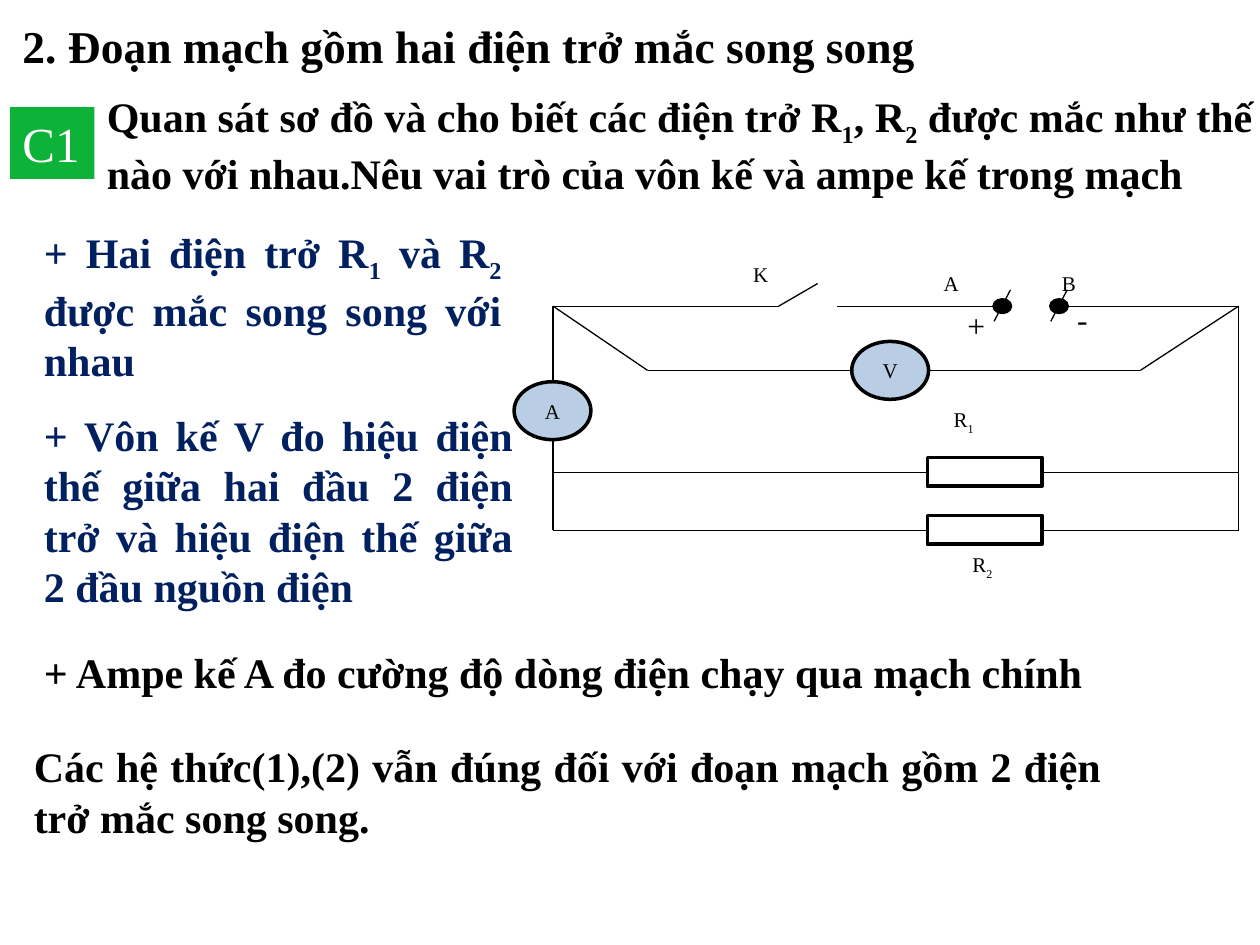
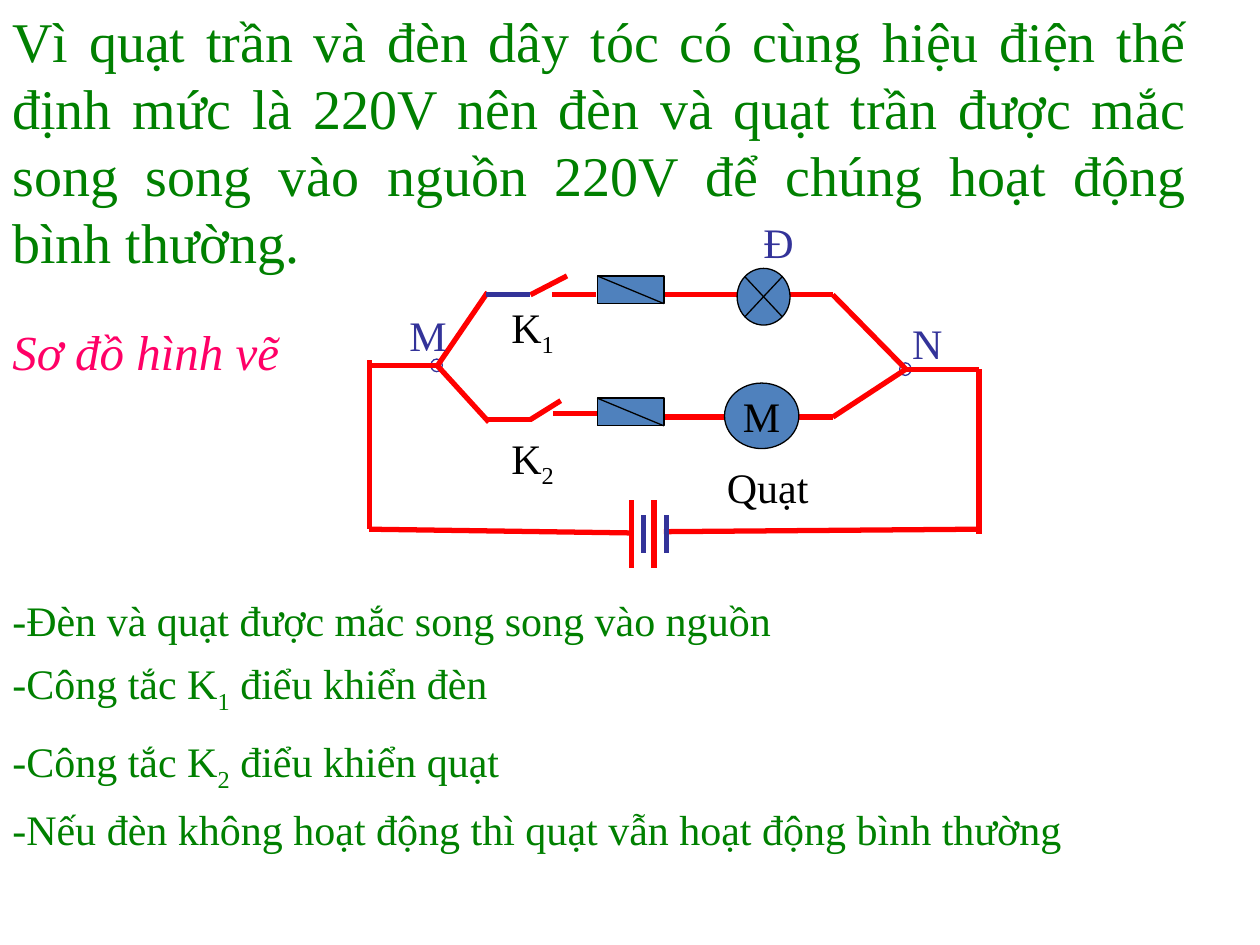
"""Builds two slides on parallel circuits, each with notes and a circuit diagram."""
from itertools import pairwise

from lxml.etree import SubElement
from pptx import Presentation
from pptx.dml.color import RGBColor
from pptx.enum.shapes import MSO_CONNECTOR as Connector, MSO_SHAPE as Preset
from pptx.enum.text import MSO_ANCHOR as Anchor, MSO_AUTO_SIZE as AutoSize, PP_ALIGN as Align
from pptx.oxml.ns import qn
from pptx.util import Inches, Pt

FONT = "Times New Roman"
BLACK, WHITE, NAVY, GREEN = "000000", "FFFFFF", "002060", "008000"
BADGE, METER, STEEL = "0DB338", "B9CDE5", "4F81BD"
RED, INDIGO, PINK = "FF0000", "333399", "FF0066"
BOLD = dict(size=24, bold=True)
JUSTIFIED = dict(BOLD, align=Align.JUSTIFY)
THIN, THICK = 0.75, 3

PARALLEL_NOTES = [
    ("2. Đoạn mạch gồm hai điện trở mắc song song", (0.08, 0.05, 9, 0.62),
     dict(JUSTIFIED, size=26, anchor=Anchor.MIDDLE)),
    ("Quan sát sơ đồ và cho biết các điện trở R_1, R_2 được mắc như thế nào với nhau."
     "Nêu vai trò của vôn kế và ampe kế trong mạch", (0.75, 0.67, 9.83, 0.91), BOLD),
    ("+ Hai điện trở R_1 và R_2 được mắc song song với nhau",
     (0.25, 1.75, 3.83, 1.3), dict(JUSTIFIED, color=NAVY)),
    ("+ Vôn kế V đo hiệu điện thế giữa hai đầu 2 điện trở và hiệu điện thế giữa "
     "2 đầu nguồn điện", (0.25, 3.2, 3.92, 1.7), dict(JUSTIFIED, color=NAVY)),
    ("+ Ampe kế A đo cường độ dòng điện chạy qua mạch chính",
     (0.25, 5.08, 8.67, 0.5), JUSTIFIED),
    ("Các hệ thức(1),(2) vẫn đúng đối với đoạn mạch gồm 2 điện trở mắc song song.",
     (0.17, 5.83, 8.67, 0.9), JUSTIFIED),
]
LEFT, RIGHT, TOP, VOLT_ROW = 4.39, 9.83, 2.43, 2.94
RESISTOR_ROWS = (3.75, 4.21)
RESISTOR_LEFT, RESISTOR_RIGHT = 7.36, 8.27
PARALLEL_WIRES = [
    [(LEFT, TOP), (6.18, TOP), (6.49, 2.25)],
    [(6.64, TOP), (7.89, TOP)],
    [(8.47, TOP), (RIGHT, TOP), (RIGHT, RESISTOR_ROWS[-1])],
    [(LEFT, TOP), (LEFT, 3.03)],
    [(LEFT, 3.49), (LEFT, RESISTOR_ROWS[-1])],
    [(LEFT, TOP), (5.14, VOLT_ROW), (6.76, VOLT_ROW)],
    [(7.36, VOLT_ROW), (9.05, VOLT_ROW), (RIGHT, TOP)],
]
SOURCE_POLES = (7.89, 8.34)
METERS = [("A", 4.08, 3.03), ("V", 6.76, 2.71)]
PARALLEL_LABELS = [
    ("K", 5.88, 2.03, 12), ("A", 7.39, 2.1, 12), ("B", 8.33, 2.1, 12),
    ("R_1", 7.47, 3.18, 12), ("R_2", 7.62, 4.33, 12),
    ("+", 7.58, 2.38, 18), ("-", 8.45, 2.33, 18),
]

LAMP_NOTES = [
    ("Vì quạt trần và đèn dây tóc có cùng hiệu điện thế định mức là 220V nên đèn và quạt "
     "trần được mắc song song vào nguồn 220V để chúng hoạt động bình thường.",
     (0, 0, 9.52, 2.26), dict(size=32, color=GREEN, align=Align.JUSTIFY)),
    ("Sơ đồ hình vẽ", (0, 2.5, 2.38, 0.57),
     dict(size=28, color=PINK, italic=True, wrap=False)),
    ("-Đèn và quạt được mắc song song vào nguồn", (0, 4.67, 7.33, 0.51), dict(color=GREEN)),
    ("-Công tắc K_1 điểu khiển đèn\n-Công tắc K_2 điểu khiển quạt",
     (0, 5.17, 7.25, 1.11), dict(color=GREEN)),
    ("-Nếu đèn không hoạt động thì quạt vẫn hoạt động bình thường",
     (0, 6.33, 9.77, 0.51), dict(color=GREEN)),
]
LAMP_WIRES = [
    [(2.93, 2.86), (2.93, 4.2), (5.03, 4.23)],
    [(5.27, 4.22), (7.76, 4.2)],
    [(7.18, 2.93), (7.77, 2.93), (7.77, 4.24)],
    [(2.92, 2.9), (3.46, 2.9)],
    [(3.46, 2.92), (3.87, 2.32)],
    [(3.47, 2.9), (3.88, 3.35)],
    [(3.87, 3.33), (4.22, 3.33)],
    [(4.21, 2.34), (4.5, 2.19)],
    [(4.21, 3.33), (4.45, 3.18)],
    [(4.38, 2.34), (4.73, 2.34)],
    [(4.39, 3.28), (4.74, 3.28)],
    [(5.26, 2.34), (5.85, 2.34)],
    [(5.26, 3.31), (5.79, 3.31)],
    [(6.26, 2.34), (6.61, 2.34), (7.19, 2.93)],
    [(6.26, 3.31), (6.61, 3.31), (7.19, 2.93)],
]
BATTERY_PLATES = [(5.01, 0.27, RED), (5.11, 0.15, INDIGO),
                  (5.19, 0.27, RED), (5.29, 0.15, INDIGO)]
BATTERY_MIDDLE = 4.24
JUNCTIONS = [(3.42, 2.85), (7.14, 2.88)]
FUSE_LEFT, FUSE_TOPS, FUSE_WIDTH, FUSE_HEIGHT = 4.74, (2.19, 3.16), 0.53, 0.22
LAMP_LABELS = [
    ("M", 3.15, 2.41, INDIGO), ("N", 7.14, 2.47, INDIGO), ("Đ", 5.96, 1.67, INDIGO),
    ("Quạt", 5.67, 3.61, BLACK), ("K_1", 3.96, 2.34, BLACK), ("K_2", 3.96, 3.38, BLACK),
]


def rgb(value):
    return RGBColor.from_string(value)


def write(frame, text, size=24, color=BLACK, bold=False, italic=False,
          align=Align.LEFT, anchor=Anchor.TOP, wrap=True):
    frame.word_wrap = wrap
    frame.vertical_anchor = anchor
    for number, line in enumerate(text.split("\n")):
        para = frame.add_paragraph() if number else frame.paragraphs[0]
        para.alignment = align
        if number:
            para.space_before = Pt(size / 2)
        first, *rest = line.split("_")
        pieces = [(first, False)]
        for part in rest:
            pieces += [(part[0], True), (part[1:], False)]
        for words, lowered in pieces:
            if not words:
                continue
            span = para.add_run()
            span.text = words
            font = span.font
            font.name, font.size = FONT, Pt(size)
            font.bold, font.italic = bold, italic
            font.color.rgb = rgb(color)
            if lowered:
                span._r.get_or_add_rPr().set("baseline", "-25000")


def add_text(page, text, area, **style):
    box = page.shapes.add_textbox(*map(Inches, area))
    box.text_frame.auto_size = AutoSize.SHAPE_TO_FIT_TEXT
    write(box.text_frame, text, **style)


def add_symbol(page, preset, area, fill, line=BLACK, weight=THIN):
    shape = page.shapes.add_shape(preset, *map(Inches, area))
    shape.shadow.inherit = False
    shape.fill.solid()
    shape.fill.fore_color.rgb = rgb(fill)
    if line:
        shape.line.color.rgb = rgb(line)
        shape.line.width = Pt(weight)
    else:
        shape.line.fill.background()
    return shape


def add_wire(page, points, color=BLACK, weight=THIN):
    for start, end in pairwise(points):
        wire = page.shapes.add_connector(Connector.STRAIGHT, *map(Inches, start + end))
        wire.line.color.rgb = rgb(color)
        wire.line.width = Pt(weight)
        SubElement(wire._element.spPr, qn("a:effectLst"))


def add_page(deck, notes):
    page = deck.slides.add_slide(deck.slide_layouts[6])
    for text, area, style in notes:
        add_text(page, text, area, **style)
    return page


def build_parallel_page(deck):
    page = add_page(deck, PARALLEL_NOTES)
    badge = add_symbol(page, Preset.RECTANGLE, (0.08, 0.85, 0.67, 0.57), BADGE, line=None)
    write(badge.text_frame, "C1", size=28, color=WHITE)

    for points in PARALLEL_WIRES:
        add_wire(page, points)
    for row in RESISTOR_ROWS:
        add_wire(page, [(LEFT, row), (RESISTOR_LEFT, row)])
        add_wire(page, [(RESISTOR_RIGHT, row), (RIGHT, row)])
        add_symbol(page, Preset.RECTANGLE,
                   (RESISTOR_LEFT, row - 0.12, RESISTOR_RIGHT - RESISTOR_LEFT, 0.23),
                   WHITE, weight=2)
    for left in SOURCE_POLES:
        add_symbol(page, Preset.OVAL, (left, 2.38, 0.13, 0.1), BLACK, weight=2)
        add_wire(page, [(left + 0.13, 2.3), (left, 2.55)])
    for name, left, top in METERS:
        meter = add_symbol(page, Preset.OVAL, (left, top, 0.61, 0.46), METER, weight=2)
        write(meter.text_frame, name, size=12, align=Align.CENTER, anchor=Anchor.MIDDLE)
    for text, left, top, size in PARALLEL_LABELS:
        add_text(page, text, (left, top, 0.6, 0.42), size=size)


def build_lamp_page(deck):
    page = add_page(deck, LAMP_NOTES)
    for left, top in JUNCTIONS:
        add_symbol(page, Preset.OVAL, (left, top, 0.09, 0.1), WHITE, INDIGO)
    for points in LAMP_WIRES:
        add_wire(page, points, RED, THICK)
    add_wire(page, [(3.86, 2.34), (4.21, 2.34)], INDIGO, THICK)
    for left, reach, color in BATTERY_PLATES:
        add_wire(page, [(left, BATTERY_MIDDLE - reach), (left, BATTERY_MIDDLE + reach)],
                 color, THICK)

    add_symbol(page, Preset.FLOWCHART_SUMMING_JUNCTION, (5.85, 2.13, 0.42, 0.45), STEEL)
    fan = add_symbol(page, Preset.OVAL, (5.75, 3.04, 0.59, 0.52), STEEL)
    write(fan.text_frame, "M", align=Align.CENTER, anchor=Anchor.MIDDLE, wrap=False)
    for top in FUSE_TOPS:
        add_symbol(page, Preset.RECTANGLE, (FUSE_LEFT, top, FUSE_WIDTH, FUSE_HEIGHT), STEEL)
        add_wire(page, [(FUSE_LEFT, top), (FUSE_LEFT + FUSE_WIDTH, top + FUSE_HEIGHT)])
    for text, left, top, color in LAMP_LABELS:
        add_text(page, text, (left, top, 0.88, 0.45), color=color)


def main():
    deck = Presentation()
    deck.slide_width, deck.slide_height = Inches(10), Inches(7.5)
    build_parallel_page(deck)
    build_lamp_page(deck)
    deck.save("out.pptx")


if __name__ == "__main__":
    main()
